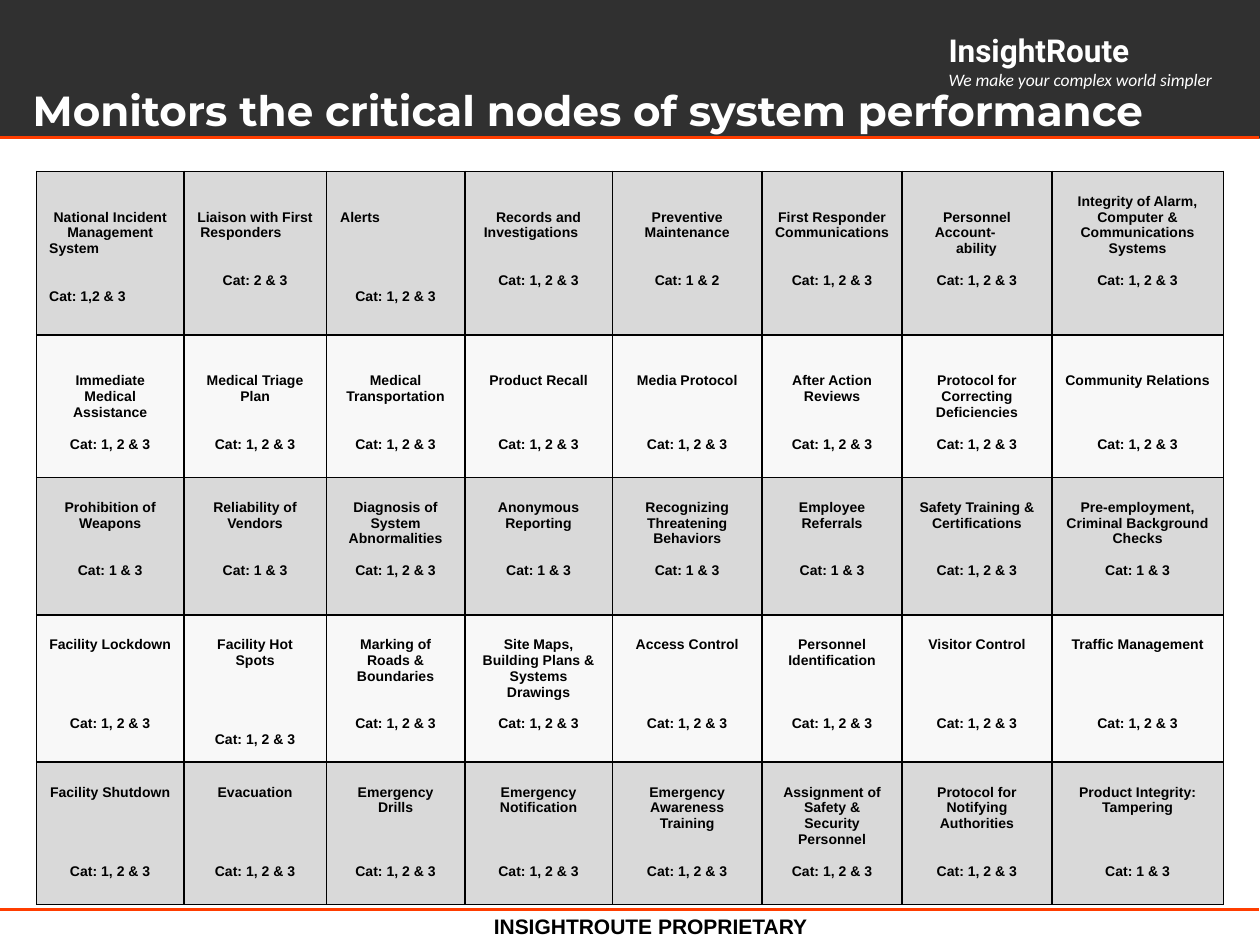
from dataclasses import dataclass

from lxml.etree import SubElement
from pptx import Presentation
from pptx.dml.color import RGBColor
from pptx.enum.shapes import MSO_CONNECTOR, MSO_SHAPE
from pptx.enum.text import MSO_ANCHOR, PP_ALIGN
from pptx.oxml.ns import qn
from pptx.util import Emu, Inches, Pt

COLORS = {
    "banner": "303030", "accent": "FF3D00", "light": "FFFFFF", "ink": "000000",
    "shaded": "D9D9D9", "plain": "F8F8F8",
}
# The slide is a grid of 100 columns by 75 rows of square units.
UNIT = Inches(0.1)
LINE_HEIGHT = Pt(9.05)
COLUMN_WIDTHS = (11.7, 11.3, 11, 11.7, 11.9, 11.1, 11.9, 13.6)
# Lines set from the left edge of their cell, with their indent in units.
LEFT_INDENTS = {
    "System": 0, "Cat: 1,2 & 3": 0, "Alerts": 0.1, "Responders": 0.3,
    "Investigations": 0.5, "Account-": 1.6, "ability": 3.3,
}


@dataclass
class Node:
    """A label, the blank lines below it and the categories it serves."""
    label: str
    gap: int
    categories: str = "1, 2 & 3"
    rise: int = 0


@dataclass
class Band:
    """A table row whose labels start below `lead` empty lines."""
    height: float
    lead: int
    nodes: list[Node]


@dataclass
class Line:
    text: str
    style: dict
    color: str


@dataclass
class Caption:
    box: tuple[float, float, float, float]
    lines: list[Line]
    frame: dict
    align: PP_ALIGN = PP_ALIGN.LEFT
    spacing: float = 1.0


CELL_FONT = {"name": "Arial", "size": Pt(8), "bold": True}

BANDS = [
    Band(13, 2, [
        Node("National Incident Management\nSystem", 2, "1,2 & 3"),
        Node("Liaison with First\nResponders", 2, "2 & 3"),
        Node("Alerts", 4),
        Node("Records and\nInvestigations", 2),
        Node("Preventive\nMaintenance", 2, "1 & 2"),
        Node("First Responder\nCommunications", 2),
        Node("Personnel\nAccount-\nability", 1),
        Node("Integrity of Alarm, Computer & Communications Systems", 1, rise=1),
    ]),
    Band(11.3, 2, [
        Node("Immediate Medical Assistance", 1),
        Node("Medical Triage Plan", 2),
        Node("Medical Transportation", 2),
        Node("Product Recall", 3),
        Node("Media Protocol", 3),
        Node("After Action Reviews", 2),
        Node("Protocol for Correcting Deficiencies", 1),
        Node("Community Relations", 3),
    ]),
    Band(10.9, 1, [
        Node("Prohibition of Weapons", 2, "1 & 3"),
        Node("Reliability of\nVendors", 2, "1 & 3"),
        Node("Diagnosis of\nSystem Abnormalities", 1),
        Node("Anonymous Reporting", 2, "1 & 3"),
        Node("Recognizing\nThreatening Behaviors", 1, "1 & 3"),
        Node("Employee Referrals", 2, "1 & 3"),
        Node("Safety Training & Certifications", 2),
        Node("Pre-employment, Criminal Background Checks", 1, "1 & 3"),
    ]),
    Band(11.7, 1, [
        Node("Facility Lockdown", 4),
        Node("Facility Hot Spots", 4),
        Node("Marking of Roads & Boundaries", 2),
        Node("Site Maps, Building Plans & Systems Drawings", 1),
        Node("Access Control", 4),
        Node("Personnel Identification", 3),
        Node("Visitor Control", 4),
        Node("Traffic Management", 4),
    ]),
    Band(11.3, 1, [
        Node("Facility Shutdown", 4),
        Node("Evacuation", 4),
        Node("Emergency Drills", 3),
        Node("Emergency Notification", 3),
        Node("Emergency Awareness Training", 2),
        Node("Assignment of Safety & Security Personnel", 1),
        Node("Protocol for Notifying Authorities", 2),
        Node("Product Integrity: Tampering", 3, "1 & 3"),
    ]),
]

BRAND = Caption(
    (74.3, 2, 23, 5.7),
    [Line("InsightRoute", {"name": "Roboto", "size": Pt(18), "bold": True}, "light"),
     Line("We make your complex world simpler",
          {"name": "Calibri", "size": Pt(10), "italic": True}, "light")],
    {"word_wrap": False})
FOOTER = Caption(
    (32.5, 69.8, 38.3, 5.2),
    [Line("INSIGHTROUTE PROPRIETARY",
          {"name": "Arial", "size": Pt(12), "bold": True}, "ink")],
    {"word_wrap": True, "vertical_anchor": MSO_ANCHOR.BOTTOM}, PP_ALIGN.CENTER)
TITLE = Caption(
    (2.6, 5.6, 97, 9.1),
    [Line("Monitors the critical nodes of system performance",
          {"name": "Montserrat", "size": Pt(24), "bold": True}, "light")],
    {"word_wrap": True, "vertical_anchor": MSO_ANCHOR.BOTTOM,
     "margin_left": 0, "margin_bottom": Inches(0.4)}, spacing=0.85)


def units(count: float) -> Emu:
    return Emu(round(count * UNIT))


def rgb(color: str) -> RGBColor:
    return RGBColor.from_string(COLORS[color])


def apply(target, values: dict) -> None:
    for attribute, value in values.items():
        setattr(target, attribute, value)


def write_line(frame, index: int, line: Line):
    paragraph = frame.paragraphs[0] if index == 0 else frame.add_paragraph()
    run = paragraph.add_run()
    run.text = line.text
    apply(run.font, line.style)
    run.font.color.rgb = rgb(line.color)
    return paragraph


def draw_caption(slide, caption: Caption) -> None:
    frame = slide.shapes.add_textbox(*map(units, caption.box)).text_frame
    apply(frame, caption.frame)
    for index, line in enumerate(caption.lines):
        paragraph = write_line(frame, index, line)
        apply(paragraph, {"alignment": caption.align, "line_spacing": caption.spacing})


def draw_banner(slide) -> None:
    banner = slide.shapes.add_shape(MSO_SHAPE.RECTANGLE, 0, 0, units(100), units(11))
    banner.shadow.inherit = False
    banner.fill.solid()
    banner.fill.fore_color.rgb = rgb("banner")
    banner.line.fill.background()


def draw_rule(slide, row: float) -> None:
    rule = slide.shapes.add_connector(
        MSO_CONNECTOR.STRAIGHT, 0, units(row), units(99.9), units(row))
    rule.line.color.rgb = rgb("accent")
    rule.line.width = Pt(2)
    SubElement(rule._element.spPr, qn("a:effectLst"))


def draw_borders(cell) -> None:
    properties = cell._tc.get_or_add_tcPr()
    for position, side in enumerate(("lnL", "lnR", "lnT", "lnB")):
        border = properties.makeelement(qn(f"a:{side}"), {"w": str(Pt(1))})
        fill = SubElement(border, qn("a:solidFill"))
        SubElement(fill, qn("a:srgbClr"), val=COLORS["ink"])
        properties.insert(position, border)


def fill_cell(cell, node: Node, lead: int, color: str) -> None:
    cell.fill.solid()
    cell.fill.fore_color.rgb = rgb(color)
    cell.margin_top = Inches(0.05) + (lead - node.rise) * LINE_HEIGHT
    cell.margin_bottom = 0
    draw_borders(cell)
    texts = [*node.label.split("\n"), f"Cat: {node.categories}"]
    for index, text in enumerate(texts):
        paragraph = write_line(cell.text_frame, index, Line(text, CELL_FONT, "ink"))
        paragraph.alignment = PP_ALIGN.CENTER
        if text in LEFT_INDENTS:
            paragraph.alignment = PP_ALIGN.LEFT
            paragraph._p.get_or_add_pPr().set("marL", str(units(LEFT_INDENTS[text])))
    paragraph.space_before = Emu(node.gap * LINE_HEIGHT)


def draw_nodes(slide) -> None:
    table = slide.shapes.add_table(
        len(BANDS), len(COLUMN_WIDTHS), units(2.9), units(13.6),
        units(sum(COLUMN_WIDTHS)), units(sum(band.height for band in BANDS))).table
    for column, width in zip(table.columns, COLUMN_WIDTHS):
        column.width = units(width)
    for index, (row, band) in enumerate(zip(table.rows, BANDS)):
        row.height = units(band.height)
        for cell, node in zip(row.cells, band.nodes):
            fill_cell(cell, node, band.lead, "plain" if index % 2 else "shaded")


def main() -> None:
    deck = Presentation()
    apply(deck, {"slide_width": units(100), "slide_height": units(75)})
    slide = deck.slides.add_slide(deck.slide_layouts[6])
    draw_banner(slide)
    for row in (10.9, 72.2):
        draw_rule(slide, row)
    draw_caption(slide, BRAND)
    draw_caption(slide, FOOTER)
    draw_nodes(slide)
    draw_caption(slide, TITLE)
    deck.save("out.pptx")


if __name__ == "__main__":
    main()
